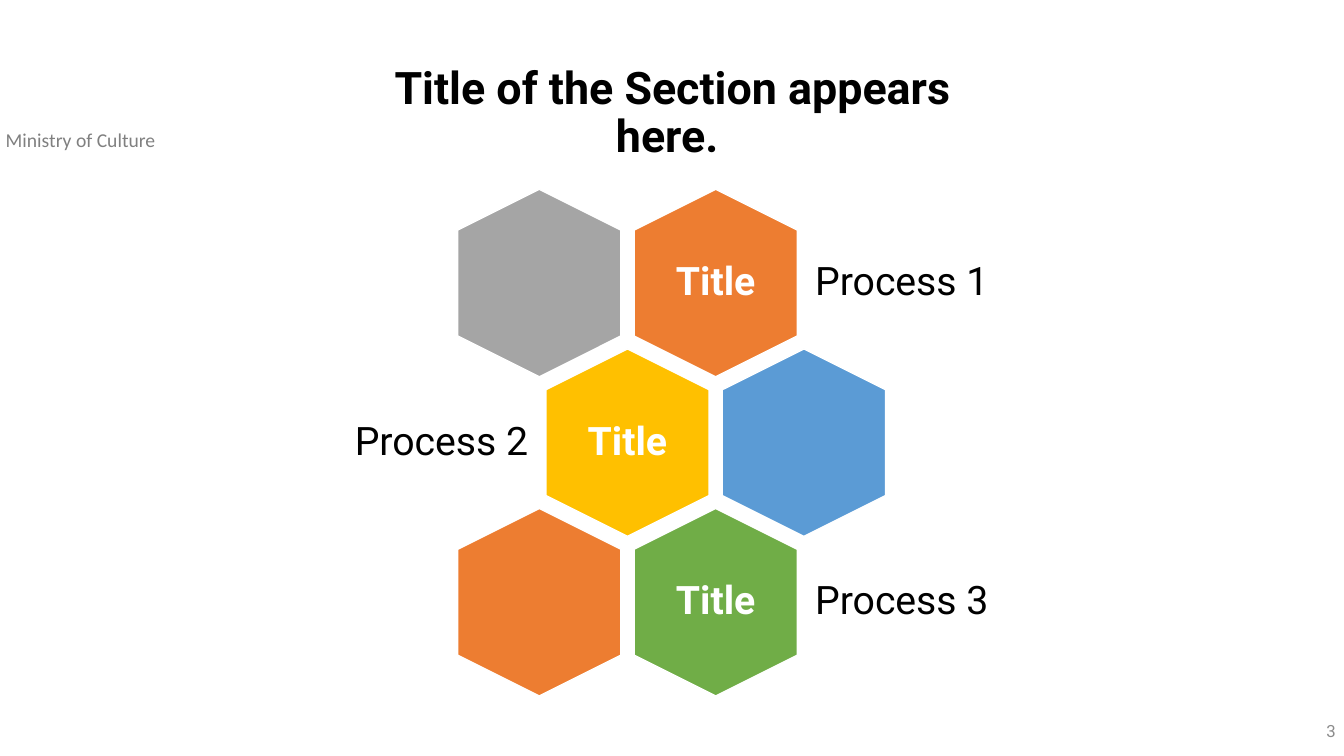
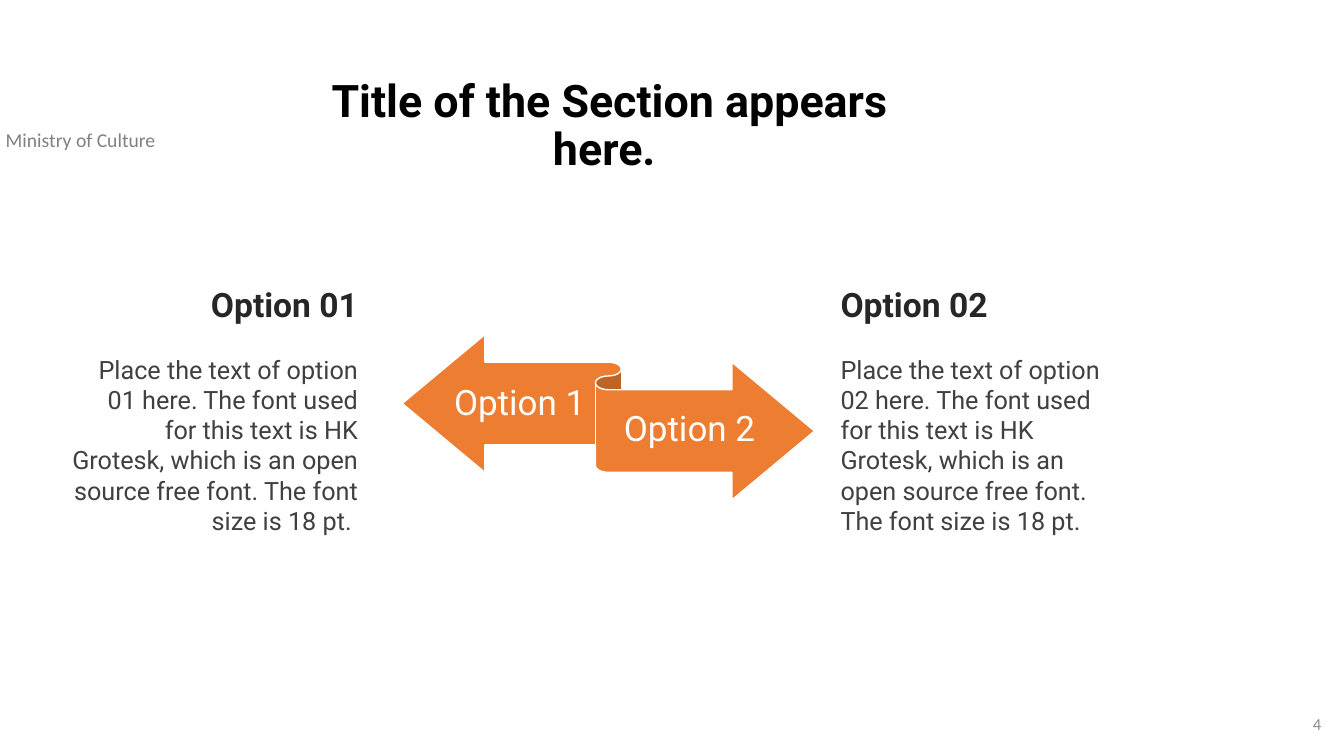
from pptx import Presentation
from pptx import util as u
from pptx.dml.color import RGBColor
from pptx.enum import shapes, text

INK = {
    "white": "FFFFFF", "black": "000000", "head": "262626", "body": "404040",
    "tag": "808080", "page": "8C8C8C", "orange": "ED7D31", "grey": "A5A5A5",
    "gold": "FFC000", "blue": "5B9BD5", "green": "70AD47",
}
LEFT, MID, RIGHT = text.PP_ALIGN.LEFT, text.PP_ALIGN.CENTER, text.PP_ALIGN.RIGHT
KIND = shapes.MSO_SHAPE

deck = Presentation()
deck.slide_width, deck.slide_height = u.Inches(13.333), u.Inches(7.5)
CELL = deck.slide_height / 90  # square grid: 160 columns by 90 rows


def write(page, box, paras, align=LEFT, inset=(1.2, 0.6), middle=False,
          lead=1.0, gap=0):
    """Add a text box; paras holds (words, size, colour, bold, font)."""
    frame = page.shapes.add_textbox(*[round(n * CELL) for n in box]).text_frame
    frame.word_wrap = True
    frame.margin_left = frame.margin_right = round(inset[0] * CELL)
    frame.margin_top = frame.margin_bottom = round(inset[1] * CELL)
    if middle:
        frame.vertical_anchor = text.MSO_ANCHOR.MIDDLE
    for i, (words, size, ink, bold, face) in enumerate(paras):
        para = frame.add_paragraph() if i else frame.paragraphs[0]
        para.alignment, para.line_spacing = align, lead
        if i:
            para.space_before = u.Pt(gap)
        run = para.add_run()
        run.text = words
        run.font.size, run.font.bold, run.font.name = u.Pt(size), bold, face
        run.font.color.rgb = RGBColor.from_string(INK[ink])


def draw(page, kind, box, ink):
    """Add a filled shape with a thin white outline."""
    shape = page.shapes.add_shape(kind, *[round(n * CELL) for n in box])
    shape.shadow.inherit = False
    shape.fill.solid()
    shape.fill.fore_color.rgb = RGBColor.from_string(INK[ink])
    shape.line.color.rgb = RGBColor.from_string(INK["white"])
    shape.line.width = u.Pt(1)
    return shape


# Shared parts: tag, title and page number
pages = []
for num, face, title, foot in (
    ("3", "Roboto", (39.6, 7.2), (124.2, 84.6)),
    ("4", "Calibri", (32.1, 8.76), (122.5, 83.76)),
):
    page = deck.slides.add_slide(deck.slide_layouts[6])
    write(page, (-0.5, 14.64, 34.8, 4.08),
          [("Ministry of Culture", 14, "tag", False, "Calibri")])
    write(page, (*title, 81, 12.84),
          [("Title of the Section appears here. ", 32, "black", True, "Roboto")],
          MID, lead=0.9)
    write(page, (*foot, 36, 4.8), [(num, 12, "page", False, face)],
          RIGHT, middle=True)
    pages.append(page)
comb, choice = pages

# Honeycomb: odd rows move right by half a pitch
WIDE, TALL = 22.32, 19.44
PITCH, STEP = 21, 19
for row, col, ink, label in (
    (0, 0, "grey", None), (0, 1, "orange", "Process 1"),
    (1, 0, "gold", "Process 2"), (1, 1, "blue", None),
    (2, 0, "orange", None), (2, 1, "green", "Process 3"),
):
    x = 64.2 + PITCH * (col + row % 2 / 2)
    y = 33.7 + STEP * row
    hexa = draw(comb, KIND.HEXAGON, (x - WIDE / 2, y - TALL / 2, WIDE, TALL), ink)
    hexa.adjustments[0] = 0.25
    hexa.rotation = 90
    if label:
        write(comb, (x - 6.7, y - 7.7, 13.4, 15.4),
              [("Title", 28, "white", True, "Roboto")],
              MID, (1.44, 1.44), True, 0.9)
        # Labels sit outside the comb: right of column 1, left of column 0
        side = x + 10.4 if col else x - 10.4 - 25
        write(comb, (side, y - 6.7, 25, 13.4),
              [(label, 28, "black", False, "Roboto")],
              LEFT if col else RIGHT, (1.44, 1.44), True, 0.9)

# Ribbon with its two labels
draw(choice, KIND.LEFT_RIGHT_RIBBON, (47.88, 39.84, 49.08, 19.68), "orange")
for words, x, y, wide in (("Option 1", 53.76, 43.32, 16.2),
                          ("Option 2", 72.48, 46.44, 19.2)):
    write(choice, (x, y, wide, 9.6), [(words, 25, "white", False, "Roboto")],
          MID, (0, 1.2), True, 0.9)

# Option texts on both sides
for num, x, wide, align, tail in (("01", 7.2, 36.6, RIGHT, " "),
                                  ("02", 98.88, 35.4, LEFT, "")):
    body = (f"Place the text of option {num} here. The font used for this text "
            f"is HK Grotesk, which is an open source free font. "
            f"The font size is 18 pt.{tail}")
    write(choice, (x, 33.24, wide, 35.16),
          [("Option " + num, 24, "head", True, "Roboto"),
           (body, 18, "body", False, "Roboto")], align, gap=21)

deck.save("out.pptx")
